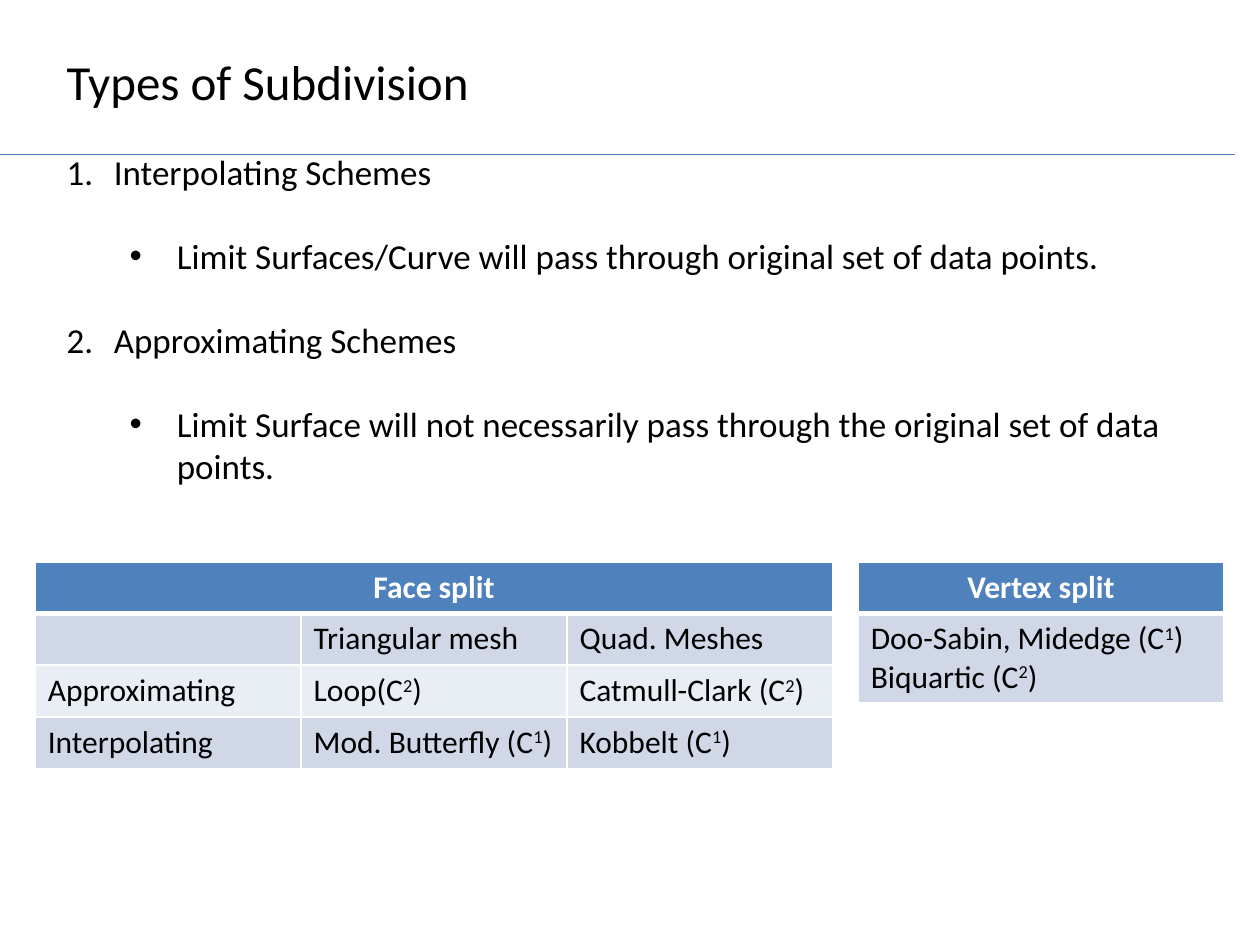
from pptx import Presentation
from pptx.dml.color import RGBColor as RGB
from pptx.enum.shapes import MSO_CONNECTOR as Link
from pptx.enum.text import MSO_ANCHOR as Anchor, MSO_AUTO_SIZE as Fit, PP_ALIGN as Align
from pptx.oxml.ns import qn
from pptx.util import Cm, Pt
from lxml.etree import SubElement as Sub

BLACK = RGB(0x00, 0x00, 0x00)
WHITE = RGB(0xFF, 0xFF, 0xFF)
BLUE = RGB(0x4F, 0x81, 0xBD)
RULE = RGB(0x4B, 0x7E, 0xBC)
BANDS = RGB(0xD0, 0xD8, 0xE8), RGB(0xE9, 0xED, 0xF4)

FACE = [
    ["Face split", "", ""],
    ["", "Triangular mesh", "Quad. Meshes"],
    ["Approximating", "Loop(C^2)", "Catmull-Clark (C^2)"],
    ["Interpolating", "Mod. Butterfly (C^1)", "Kobbelt (C^1)"],
]
VERTEX = [["Vertex split"], ["Doo-Sabin, Midedge (C^1)\nBiquartic (C^2)"]]
SCHEMES = [
    (0, "Interpolating Schemes"),
    (1, "Limit Surfaces/Curve will pass through original set of data points."),
    (0, "Approximating Schemes"),
    (1, "Limit Surface will not necessarily pass through the original set of data points."),
]


class Deck:
    font = "Calibri"

    def __init__(self, slide):
        self.slide = slide

    def run(self, para, text, size, color=BLACK, bold=False):
        run = para.add_run()
        run.text = text
        style = {"name": self.font, "size": Pt(size), "bold": bold}
        for key, value in style.items():
            setattr(run.font, key, value)
        run.font.color.rgb = color
        return run

    def powers(self, para, text, size, color=BLACK, bold=False):
        """Add text in which ^ raises the character after it."""
        head, *rest = text.split("^")
        self.run(para, head, size, color, bold)
        for part in rest:
            power = self.run(para, part[0], size, color, bold)
            power.font._element.set("baseline", "30000")
            self.run(para, part[1:], size, color, bold)

    def place(self, shape, left, top, width, height):
        box = {"left": left, "top": top, "width": width, "height": height}
        for key, value in box.items():
            setattr(shape, key, Cm(value))
        frame = shape.text_frame
        form = {"word_wrap": True, "auto_size": Fit.NONE, "vertical_anchor": Anchor.TOP}
        for key, value in form.items():
            setattr(frame, key, value)
        return frame

    def title(self, text, *box):
        para = self.place(self.slide.shapes.title, *box).paragraphs[0]
        para.alignment = Align.LEFT
        self.run(para, text, 28)

    def list(self, items, *box):
        frame = self.place(self.slide.placeholders[1], *box)
        for i, (level, text) in enumerate(items):
            para = frame.add_paragraph() if i else frame.paragraphs[0]
            para.level = level
            para.space_before = Pt(24 if i else 0)
            props = para._p.get_or_add_pPr()
            props.set("marL", str(Cm(2.22 if level else 0.95)))
            props.set("indent", str(Cm(-0.95)))
            if level:
                Sub(props, qn("a:buFont"), typeface="Arial")
                Sub(props, qn("a:buChar"), char="•")
            else:
                Sub(props, qn("a:buFont"), typeface="+mj-lt")
                Sub(props, qn("a:buAutoNum"), type="arabicPeriod")
            self.run(para, text, 20)

    def edge(self, cell, head):
        """Draw white borders, with a thick one under the header."""
        props = cell._tc.get_or_add_tcPr()
        for i, side in enumerate(("lnL", "lnR", "lnT", "lnB")):
            thick = side == "lnB" and head
            line = Sub(props, qn("a:" + side), w=str(Pt(3 if thick else 1)))
            fill = Sub(line, qn("a:solidFill"))
            Sub(fill, qn("a:srgbClr"), val=str(WHITE))
            props.insert(i, line)

    def table(self, rows, left, top, width, heights):
        cols = len(rows[0])
        grid = self.slide.shapes.add_table(
            len(rows), cols, Cm(left), Cm(top), Cm(width * cols), Cm(sum(heights))).table
        for col in grid.columns:
            col.width = Cm(width)
        for r, (texts, height) in enumerate(zip(rows, heights)):
            grid.rows[r].height = Cm(height)
            head = r == 0
            for c, text in enumerate(texts):
                cell = grid.cell(r, c)
                cell.fill.solid()
                cell.fill.fore_color.rgb = BLUE if head else BANDS[(r - 1) % 2]
                self.edge(cell, head)
                for i, line in enumerate(text.split("\n") if text else []):
                    frame = cell.text_frame
                    para = frame.add_paragraph() if i else frame.paragraphs[0]
                    para.alignment = Align.CENTER if head else Align.LEFT
                    self.powers(para, line, 18, WHITE if head else BLACK, head)
        if cols > 1:
            grid.cell(0, 0).merge(grid.cell(0, cols - 1))

    def rule(self, y, width):
        line = self.slide.shapes.add_connector(
            Link.STRAIGHT, Cm(0), Cm(y), Cm(width), Cm(y))
        line.line.color.rgb = RULE
        line.line.width = Pt(0.75)
        Sub(line._element.spPr, qn("a:effectLst"))


def main():
    prs = Presentation()
    prs.slide_width, prs.slide_height = Cm(25.4), Cm(19.05)
    deck = Deck(prs.slides.add_slide(prs.slide_layouts[1]))
    deck.table(FACE, 0.71, 11.33, 5.36, [1.04] * 4)
    deck.table(VERTEX, 17.3, 11.33, 7.37, [1.04, 1.8])
    deck.title("Types of Subdivision", 1.09, 0.91, 22.61, 1.6)
    deck.list(SCHEMES, 1.09, 2.91, 22.61, 7.07)
    deck.rule(3.12, 24.89)
    prs.save("out.pptx")


if __name__ == "__main__":
    main()
